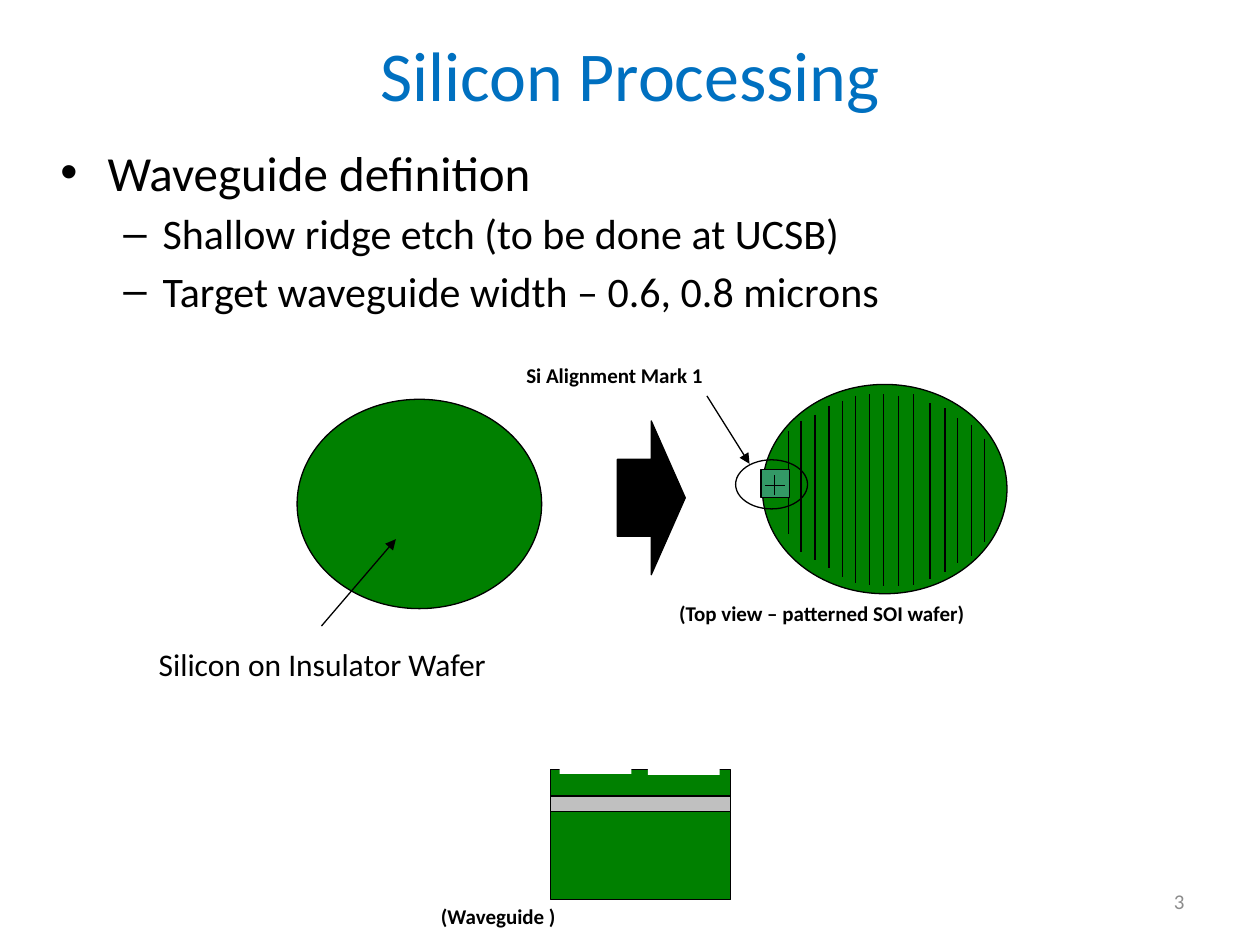
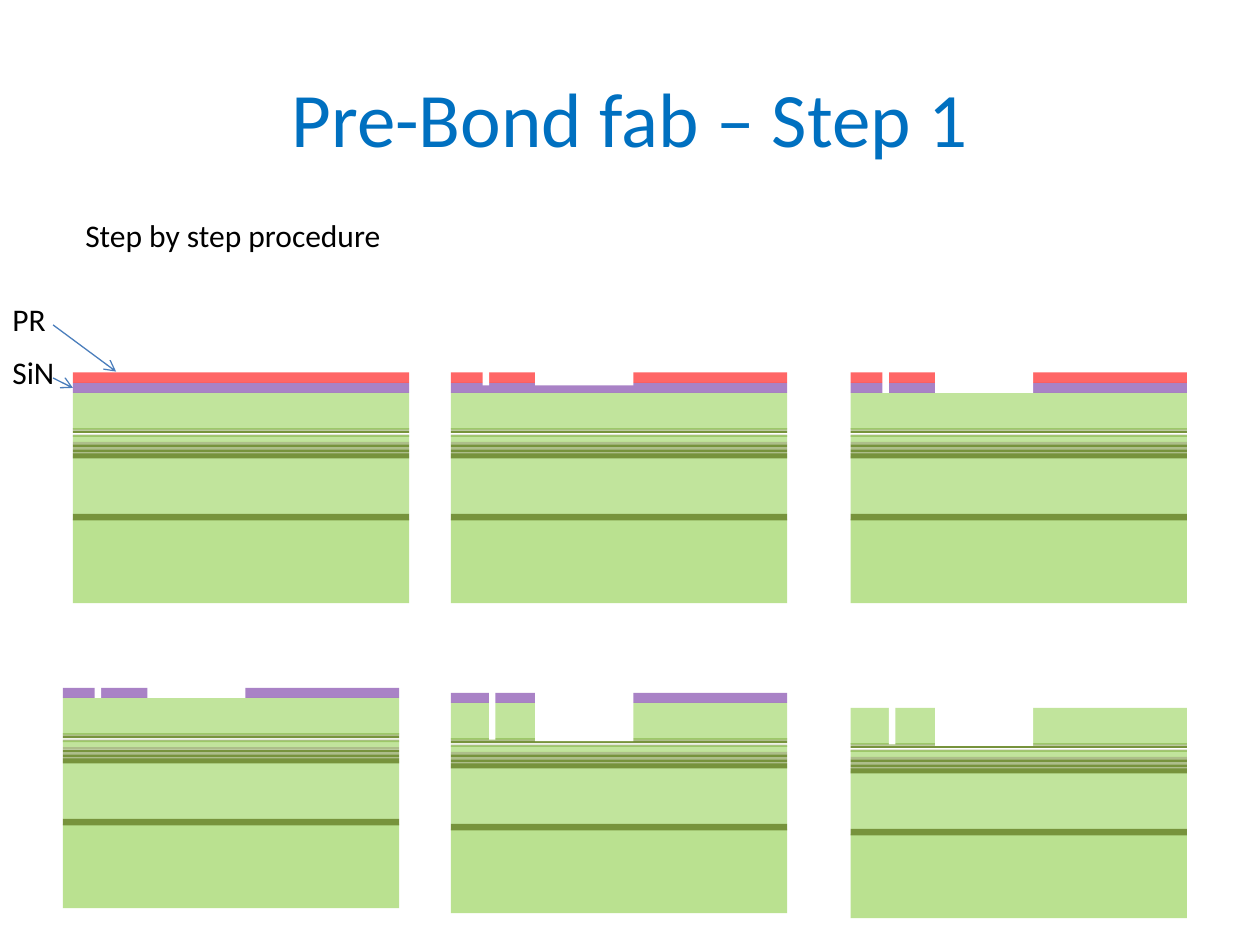
import dataclasses
import typing

import lxml.etree
import pptx
import pptx.dml.color
import pptx.enum.shapes
import pptx.enum.text
import pptx.oxml.ns
import pptx.slide
import pptx.util

Cm = pptx.util.Cm
Pt = pptx.util.Pt
RGBColor = pptx.dml.color.RGBColor
Kind = pptx.enum.shapes.MSO_SHAPE
Align = pptx.enum.text.PP_ALIGN
Anchor = pptx.enum.text.MSO_ANCHOR
qn = pptx.oxml.ns.qn

FONT = "Calibri"
BLACK = RGBColor(0x00, 0x00, 0x00)
WHITE = RGBColor(0xFF, 0xFF, 0xFF)
TITLE_BLUE = RGBColor(0x00, 0x70, 0xC0)
NUMBER_GRAY = RGBColor(0x8C, 0x8C, 0x8C)
SILICON = RGBColor(0x00, 0x80, 0x00)
OXIDE = RGBColor(0xC0, 0xC0, 0xC0)
MARK_GREEN = RGBColor(0x33, 0x99, 0x66)
POINTER_BLUE = RGBColor(0x4B, 0x7E, 0xBC)
CLADDING = RGBColor(0x92, 0xD0, 0x50)
WELL = RGBColor(0x77, 0x93, 0x3C)
NITRIDE = RGBColor(0x70, 0x30, 0xA0)
RESIST = RGBColor(0xFF, 0x00, 0x00)


class Box(typing.NamedTuple):
    left: float
    top: float
    width: float
    height: float


@dataclasses.dataclass(frozen=True)
class Form:
    box: Box
    fill: RGBColor | None
    kind: Kind = Kind.RECTANGLE
    outline: RGBColor | None = BLACK
    alpha: int = 100


@dataclasses.dataclass(frozen=True)
class Label:
    text: str
    box: Box
    size: int = 18
    bold: bool = False
    color: RGBColor = BLACK
    align: Align = Align.LEFT
    anchor: Anchor = Anchor.TOP


@dataclasses.dataclass(frozen=True)
class Stroke:
    x1: float
    y1: float
    x2: float
    y2: float
    color: RGBColor = BLACK
    head: str = ""


class Bullet(typing.NamedTuple):
    text: str
    symbol: str
    size: int
    margin: float
    hanging: float


class Layer(typing.NamedTuple):
    top: float
    height: float
    color: RGBColor
    alpha: int


class Trench(typing.NamedTuple):
    left: float
    top: float
    width: float
    height: float


@dataclasses.dataclass(frozen=True)
class Stage:
    left: float
    top: float
    films: tuple[Layer, ...]
    trenches: tuple[Trench, ...]


WAFER_WIDTH, WAFER_HEIGHT = 4.93, 4.22
CAPTION_WIDTH, CAPTION_HEIGHT = 8.79, 0.76
RIDGE_LEFT, RIDGE_WIDTH = 11.1, 3.63
STACK_WIDTH = 6.78
THIN = 0.05

BULLETS = (
    Bullet("Waveguide definition", "•", 28, 0.95, 0.95),
    Bullet("Shallow ridge etch (to be done at UCSB)", "–", 24, 2.06, 0.79),
    Bullet("Target waveguide width – 0.6, 0.8 microns", "–", 24, 2.06, 0.79),
)

WAVEGUIDES = (
    (15.9, 8.69, 10.77), (16.15, 8.48, 11.13), (16.43, 8.36, 11.28),
    (16.71, 8.18, 11.46), (16.99, 8.08, 11.63), (17.25, 7.98, 11.76),
    (17.53, 7.95, 11.79), (17.81, 7.95, 11.81), (18.11, 7.98, 11.81),
    (18.42, 7.95, 11.79), (18.75, 8.13, 11.68), (19.05, 8.23, 11.53),
    (19.3, 8.43, 11.35), (19.58, 8.56, 11.2), (19.84, 8.84, 10.92),
)

EPITAXY = (
    Layer(2.54, 1.7, CLADDING, 63),
    Layer(1.27, 1.17, CLADDING, 56),
    Layer(2.44, 0.13, WELL, 100),
    *(Layer(top, THIN, WELL, 100) for top in (1.27, 1.22, 1.14, 1.04, 0.76)),
    *(Layer(top, THIN, WELL, 60) for top in (1.19, 1.09, 0.99, 0.84, 0.71)),
    Layer(0.86, 0.13, CLADDING, 56),
    Layer(0, 0.74, CLADDING, 56),
)
NITRIDE_FILM = Layer(-0.2, 0.2, NITRIDE, 60)
RESIST_FILM = Layer(-0.41, 0.21, RESIST, 60)


def trench_pair(narrow_left: float, narrow_top: float, narrow_height: float,
                wide_top: float, wide_height: float) -> tuple[Trench, ...]:
    return (Trench(narrow_left, narrow_top, 0.13, narrow_height),
            Trench(1.7, wide_top, 1.98, wide_height))


RESIST_OPENING = trench_pair(0.64, -1.04, 0.89, -1.04, 0.89)
NITRIDE_OPENING = trench_pair(0.64, -0.89, 0.89, -0.89, 0.89)
ETCHED_OPENING = trench_pair(0.77, -0.53, 1.27, -0.3, 1.07)

STAGES = (
    Stage(1.47, 7.92, (NITRIDE_FILM, RESIST_FILM), ()),
    Stage(9.09, 7.92, (NITRIDE_FILM, RESIST_FILM), RESIST_OPENING),
    Stage(17.15, 7.92, (NITRIDE_FILM, RESIST_FILM), NITRIDE_OPENING),
    Stage(1.27, 14.07, (NITRIDE_FILM,), NITRIDE_OPENING),
    Stage(9.09, 14.17, (NITRIDE_FILM,), ETCHED_OPENING),
    Stage(17.15, 14.27, (), ETCHED_OPENING),
)


def lengths(box: Box) -> list[int]:
    return [Cm(value) for value in box]


def draw_form(page: pptx.slide.Slide, form: Form) -> typing.Any:
    shape = page.shapes.add_shape(form.kind, *lengths(form.box))
    shape.shadow.inherit = False
    if form.fill is None:
        shape.fill.background()
    else:
        shape.fill.solid()
        shape.fill.fore_color.rgb = form.fill
    if form.alpha < 100:
        color = shape.fill._xPr.find(qn("a:solidFill"))[0]
        lxml.etree.SubElement(color, qn("a:alpha"), val=str(form.alpha * 1000))
    if form.outline is None:
        shape.line.fill.background()
    else:
        shape.line.color.rgb = form.outline
        shape.line.width = Pt(0.75)
    return shape


def draw_stroke(page: pptx.slide.Slide, stroke: Stroke) -> None:
    ends = [Cm(value) for value in (stroke.x1, stroke.y1, stroke.x2, stroke.y2)]
    connector = page.shapes.add_connector(
        pptx.enum.shapes.MSO_CONNECTOR.STRAIGHT, *ends)
    connector.line.color.rgb = stroke.color
    connector.line.width = Pt(0.75)
    properties = connector._element.spPr
    if stroke.head:
        outline = properties.find(qn("a:ln"))
        lxml.etree.SubElement(outline, qn("a:tailEnd"), type=stroke.head)
    lxml.etree.SubElement(properties, qn("a:effectLst"))


def add_span(para: typing.Any, text: str, size: int,
             color: RGBColor = BLACK, bold: bool = False) -> None:
    span = para.add_run()
    span.text = text
    span.font.name = FONT
    span.font.size = Pt(size)
    span.font.bold = bold
    span.font.color.rgb = color


def add_frame(page: pptx.slide.Slide, box: Box) -> typing.Any:
    frame = page.shapes.add_textbox(*lengths(box)).text_frame
    frame.word_wrap = True
    return frame


def draw_label(page: pptx.slide.Slide, label: Label) -> None:
    frame = add_frame(page, label.box)
    frame.vertical_anchor = label.anchor
    para = frame.paragraphs[0]
    para.alignment = label.align
    add_span(para, label.text, label.size, label.color, label.bold)


def draw_title(page: pptx.slide.Slide, text: str, top: float,
               height: float, size: int) -> None:
    draw_label(page, Label(text, Box(1.27, top, 22.86, height), size,
                           color=TITLE_BLUE, align=Align.CENTER,
                           anchor=Anchor.MIDDLE))


def draw_caption(page: pptx.slide.Slide, text: str, left: float, top: float) -> None:
    box = Box(left, top, CAPTION_WIDTH, CAPTION_HEIGHT)
    draw_label(page, Label(text, box, 12, bold=True))


def draw_bullets(page: pptx.slide.Slide, box: Box,
                 bullets: typing.Iterable[Bullet]) -> None:
    frame = add_frame(page, box)
    for index, bullet in enumerate(bullets):
        para = frame.add_paragraph() if index else frame.paragraphs[0]
        para.space_before = Pt(4)
        add_span(para, bullet.text, bullet.size)
        properties = para._p.get_or_add_pPr()
        properties.set("marL", str(Cm(bullet.margin)))
        properties.set("indent", str(-Cm(bullet.hanging)))
        lxml.etree.SubElement(properties, qn("a:buFont"), typeface="Arial")
        lxml.etree.SubElement(properties, qn("a:buChar"), char=bullet.symbol)


def draw_wafer(page: pptx.slide.Slide, left: float, top: float) -> None:
    box = Box(left, top, WAFER_WIDTH, WAFER_HEIGHT)
    draw_form(page, Form(box, SILICON, Kind.OVAL))


def draw_ridge(page: pptx.slide.Slide) -> None:
    for top, height, color in ((16.36, 1.78, SILICON), (16.05, 0.31, OXIDE),
                               (15.52, 0.53, SILICON)):
        draw_form(page, Form(Box(RIDGE_LEFT, top, RIDGE_WIDTH, height), color))
    for left, top in ((11.28, 15.19), (13.06, 15.21)):
        draw_form(page, Form(Box(left, top, 1.45, 0.41), WHITE, outline=None))


def draw_stage(page: pptx.slide.Slide, stage: Stage) -> None:
    for layer in EPITAXY + stage.films:
        box = Box(stage.left, stage.top + layer.top, STACK_WIDTH, layer.height)
        draw_form(page, Form(box, layer.color, outline=None, alpha=layer.alpha))
    for trench in stage.trenches:
        box = Box(stage.left + trench.left, stage.top + trench.top,
                  trench.width, trench.height)
        draw_form(page, Form(box, WHITE, outline=None))


def build_silicon_page(page: pptx.slide.Slide) -> None:
    draw_bullets(page, Box(0.97, 2.74, 22.86, 12.57), BULLETS)
    draw_title(page, "Silicon Processing", 0.38, 2.21, 40)
    draw_wafer(page, 15.37, 7.75)
    for x, top, bottom in WAVEGUIDES:
        draw_stroke(page, Stroke(x, top, x, bottom))
    draw_wafer(page, 5.99, 8.05)
    arrow = draw_form(page, Form(Box(11.58, 9.35, 3.1, 1.37), BLACK, Kind.DOWN_ARROW))
    arrow.rotation = 270
    draw_label(page, Label("Silicon on Insulator Wafer",
                           Box(2.95, 12.88, CAPTION_WIDTH, 1.02)))
    draw_stroke(page, Stroke(6.48, 12.62, 7.98, 10.87, head="triangle"))
    draw_form(page, Form(Box(15.34, 9.47, 0.58, 0.56), MARK_GREEN))
    draw_stroke(page, Stroke(15.62, 9.58, 15.62, 9.98))
    draw_stroke(page, Stroke(15.82, 9.78, 15.42, 9.78))
    draw_caption(page, "Si Alignment Mark 1", 10.36, 7.19)
    draw_ridge(page)
    draw_caption(page, "(Waveguide )", 8.64, 18.08)
    draw_caption(page, "(Top view – patterned SOI wafer)", 13.44, 11.99)
    draw_form(page, Form(Box(14.83, 9.27, 1.45, 0.99), None, Kind.OVAL))
    draw_stroke(page, Stroke(14.25, 7.98, 15.11, 9.35, head="triangle"))
    draw_label(page, Label("3", Box(18.21, 17.65, 5.92, 1.02), 12,
                           color=NUMBER_GRAY, align=Align.RIGHT,
                           anchor=Anchor.MIDDLE))


def build_bond_page(page: pptx.slide.Slide) -> None:
    for stage in STAGES:
        draw_stage(page, stage)
    draw_title(page, "Pre-Bond fab – Step 1", 0.76, 3.18, 44)
    draw_label(page, Label("Step by step procedure", Box(1.47, 4.24, 15.44, 1.02)))
    draw_label(page, Label("PR", Box(0, 5.92, 3.18, 1.02)))
    draw_label(page, Label("SiN", Box(0, 6.99, 2.11, 1.02)))
    draw_stroke(page, Stroke(1.07, 7.62, 1.47, 7.82, POINTER_BLUE, "arrow"))
    draw_stroke(page, Stroke(1.07, 6.55, 2.34, 7.49, POINTER_BLUE, "arrow"))


def main() -> None:
    deck = pptx.Presentation()
    deck.slide_width, deck.slide_height = Cm(25.4), Cm(19.05)
    for build in (build_silicon_page, build_bond_page):
        build(deck.slides.add_slide(deck.slide_layouts[6]))
    deck.save("out.pptx")


if __name__ == "__main__":
    main()
